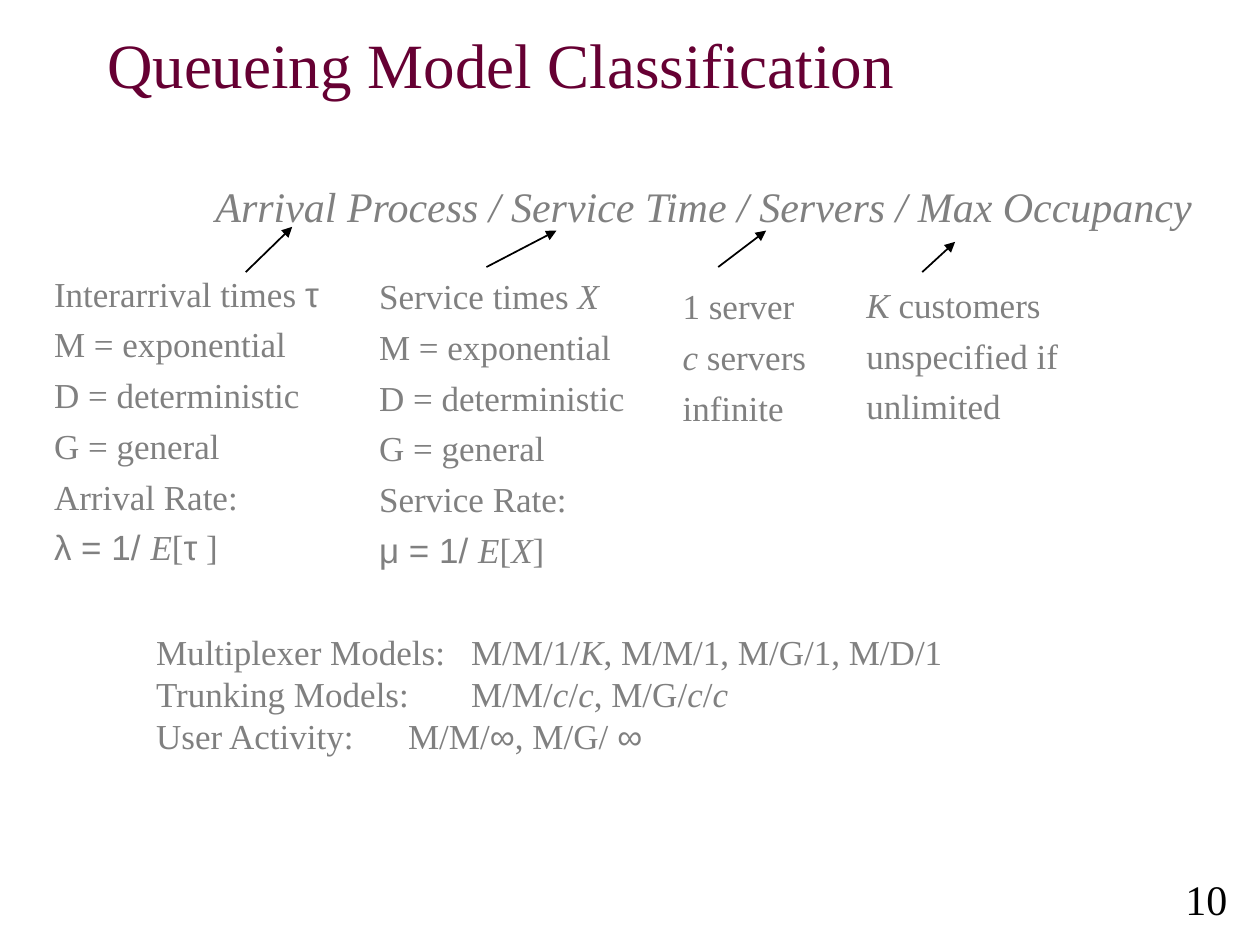
from typing import NamedTuple

import pptx
import pptx.dml.color
import pptx.enum.shapes
import pptx.enum.text
import pptx.oxml.ns
import pptx.util
from lxml import etree

Pt = pptx.util.Pt
RGBColor = pptx.dml.color.RGBColor
PP_ALIGN = pptx.enum.text.PP_ALIGN
qn = pptx.oxml.ns.qn

MAROON = RGBColor(0x66, 0x00, 0x33)
GRAY = RGBColor(0x80, 0x80, 0x80)
BLACK = RGBColor(0x00, 0x00, 0x00)
SERIF = "Times New Roman"
SANS = "Arial"
MODELS_TAB = 174.5


class Run(NamedTuple):
    text: str
    italic: bool = False
    font: str = SERIF


class Block(NamedTuple):
    left: float
    top: float
    width: float
    height: float
    lines: list[list[Run]]
    size: float = 20
    color: RGBColor = GRAY
    gap: float = 0
    align: PP_ALIGN = PP_ALIGN.LEFT
    wrap: bool = True


class Arrow(NamedTuple):
    x1: float
    y1: float
    x2: float
    y2: float


def plain(*texts: str) -> list[list[Run]]:
    return [[Run(text)] for text in texts]


def var(text: str) -> Run:
    return Run(text, italic=True)


def sans(text: str) -> Run:
    return Run(text, font=SANS)


DISTRIBUTIONS = plain("M = exponential", "D = deterministic", "G = general")

TITLE = Block(54, 0, 612, 72, plain("Queueing Model Classification"), 36, MAROON)

MODELS = Block(82, 356.4, 550, 80, [
    [Run("Multiplexer Models:\tM/M/1/"), var("K"), Run(", M/M/1, M/G/1, M/D/1")],
    [Run("Trunking Models:\tM/M/"), var("c"), Run("/"), var("c"),
     Run(", M/G/"), var("c"), Run("/"), var("c")],
    [Run("User Activity:\tM/M/"), sans("∞"), Run(", M/G/ "), sans("∞")],
])

BLOCKS = [
    Block(116, 99.4, 577.5, 36,
          [[var("Arrival Process / Service Time / Servers / Max Occupancy")]],
          size=24, wrap=False),
    Block(23.8, 151.9, 189.4, 176.4, [
        [Run("Interarrival times "), sans("τ")],
        *DISTRIBUTIONS,
        *plain("Arrival Rate:"),
        [sans("λ = 1/ "), var("E"), Run("["), sans("τ"), Run(" ]")],
    ], gap=5),
    Block(209.5, 153.4, 174.2, 176.4, [
        [Run("Service times "), var("X")],
        *DISTRIBUTIONS,
        *plain("Service Rate:"),
        [sans("μ = 1/ "), var("E"), Run("["), var("X"), Run("]")],
    ], gap=5),
    Block(383, 159.1, 91.4, 89.3, [
        *plain("1 server"),
        [var("c"), Run(" servers")],
        *plain("infinite"),
    ], gap=5),
    Block(488, 158.4, 128.9, 89.3, [
        [var("K"), Run(" customers")],
        *plain("unspecified if", "unlimited"),
    ], gap=5),
    Block(618.5, 495.4, 90, 36.7, plain("10"), 24, BLACK, align=PP_ALIGN.RIGHT),
]

ARROWS = [
    Arrow(140.4, 155.5, 167, 129.6),
    Arrow(278, 152.6, 318, 131.8),
    Arrow(410.4, 152.6, 437.8, 131.8),
    Arrow(527, 155.5, 545.8, 138.2),
]


def fill_text(sp, block: Block) -> None:
    sp.left, sp.top = Pt(block.left), Pt(block.top)
    sp.width, sp.height = Pt(block.width), Pt(block.height)
    tf = sp.text_frame
    tf.word_wrap = block.wrap
    tf.auto_size = pptx.enum.text.MSO_AUTO_SIZE.NONE
    for i, line in enumerate(block.lines):
        p = tf.add_paragraph() if i else tf.paragraphs[0]
        p.alignment = block.align
        p.space_before = Pt(block.gap if i else 0)
        for run in line:
            r = p.add_run()
            r.text = run.text
            r.font.name = run.font
            r.font.size = Pt(block.size)
            r.font.italic = run.italic
            r.font.color.rgb = block.color


def remove_bullets_and_set_tab(sp, position: float) -> None:
    for p in sp.text_frame.paragraphs:
        pPr = p._p.get_or_add_pPr()
        pPr.set("marL", "0")
        pPr.set("indent", "0")
        etree.SubElement(pPr, qn("a:buNone"))
        tabs = etree.SubElement(pPr, qn("a:tabLst"))
        etree.SubElement(tabs, qn("a:tab"), pos=str(int(Pt(position))), algn="l")


def draw_arrow(s, arrow: Arrow) -> None:
    sp = s.shapes.add_connector(
        pptx.enum.shapes.MSO_CONNECTOR.STRAIGHT, *(Pt(v) for v in arrow))
    sp.line.color.rgb = BLACK
    sp.line.width = Pt(1)
    etree.SubElement(sp.line._get_or_add_ln(), qn("a:tailEnd"), type="triangle")
    etree.SubElement(sp._element.spPr, qn("a:effectLst"))


def main() -> None:
    prs = pptx.Presentation()
    prs.slide_width, prs.slide_height = Pt(720), Pt(540)
    s = prs.slides.add_slide(prs.slide_layouts[1])
    title, body = s.placeholders
    fill_text(title, TITLE)
    title.text_frame.vertical_anchor = pptx.enum.text.MSO_ANCHOR.MIDDLE
    fill_text(body, MODELS)
    remove_bullets_and_set_tab(body, MODELS_TAB)
    for block in BLOCKS:
        fill_text(s.shapes.add_textbox(0, 0, 0, 0), block)
    for arrow in ARROWS:
        draw_arrow(s, arrow)
    prs.save("out.pptx")


if __name__ == "__main__":
    main()
